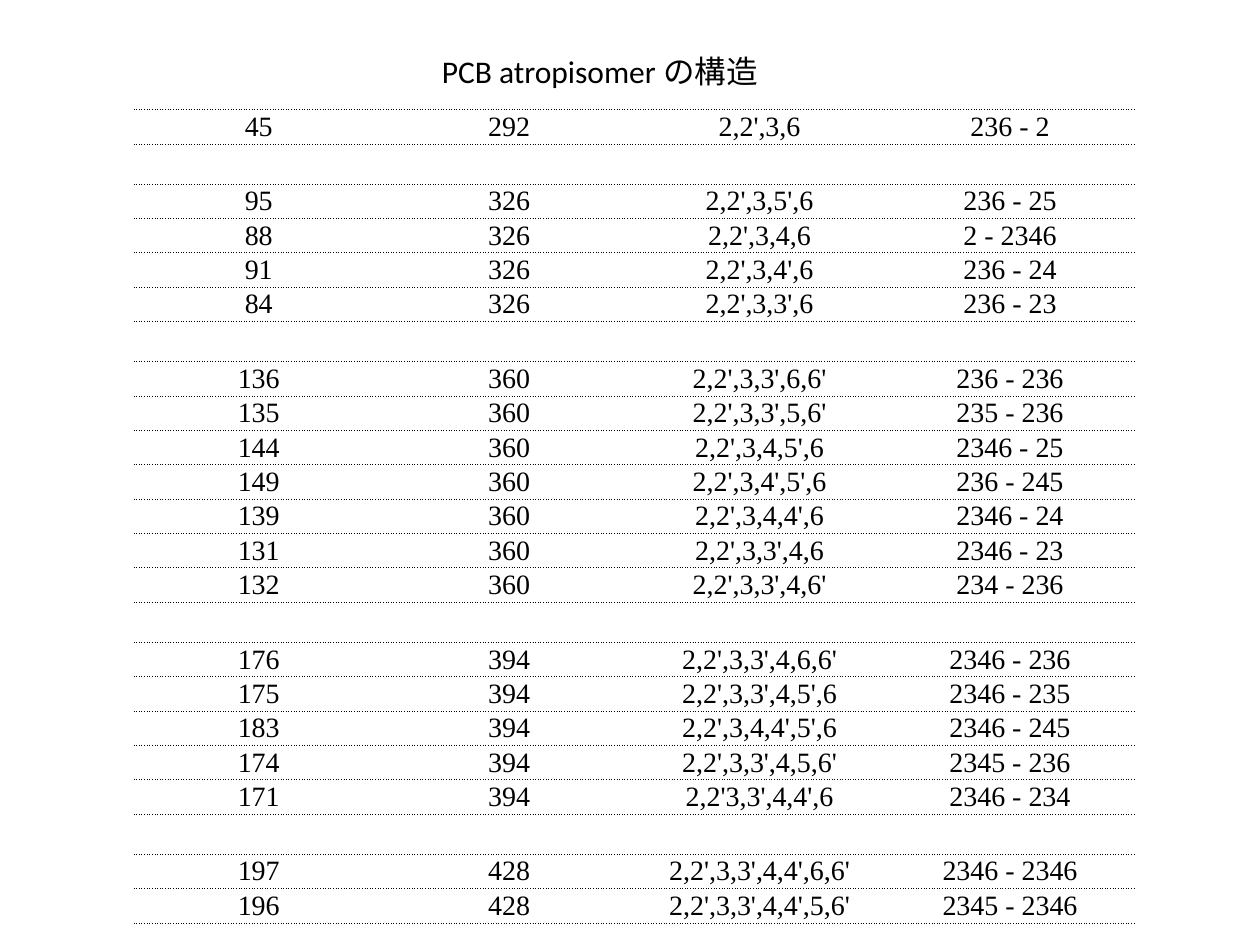
"""Build the slide that lists the PCB atropisomers by molecular mass."""
import dataclasses

import lxml.etree
import pptx
import pptx.dml.color
import pptx.enum.text
import pptx.oxml
import pptx.oxml.ns
import pptx.util

Inches = pptx.util.Inches


@dataclasses.dataclass(frozen=True)
class Theme:
    """Colours, fonts and sizes of the slide."""
    ink: str = "000000"
    title_font: str = "Calibri"
    title_size: int = 18
    body_font: str = "Times New Roman"
    body_size: int = 16
    rule_width: float = 0.5


THEME = Theme()
ROW_HEIGHT = 6.27 / 23
GAP_HEIGHT = 0.32
CONGENERS = {
    "292": [("45", "2,2',3,6", "236 - 2")],
    "326": [
        ("95", "2,2',3,5',6", "236 - 25"),
        ("88", "2,2',3,4,6", "2 - 2346"),
        ("91", "2,2',3,4',6", "236 - 24"),
        ("84", "2,2',3,3',6", "236 - 23"),
    ],
    "360": [
        ("136", "2,2',3,3',6,6'", "236 - 236"),
        ("135", "2,2',3,3',5,6'", "235 - 236"),
        ("144", "2,2',3,4,5',6", "2346 - 25"),
        ("149", "2,2',3,4',5',6", "236 - 245"),
        ("139", "2,2',3,4,4',6", "2346 - 24"),
        ("131", "2,2',3,3',4,6", "2346 - 23"),
        ("132", "2,2',3,3',4,6'", "234 - 236"),
    ],
    "394": [
        ("176", "2,2',3,3',4,6,6'", "2346 - 236"),
        ("175", "2,2',3,3',4,5',6", "2346 - 235"),
        ("183", "2,2',3,4,4',5',6", "2346 - 245"),
        ("174", "2,2',3,3',4,5,6'", "2345 - 236"),
        ("171", "2,2'3,3',4,4',6", "2346 - 234"),
    ],
    "428": [
        ("197", "2,2',3,3',4,4',6,6'", "2346 - 2346"),
        ("196", "2,2',3,3',4,4',5,6'", "2345 - 2346"),
    ],
}


def table_rows():
    """Return the rows of all mass groups, with an empty row between groups."""
    rows = []
    for mass, members in CONGENERS.items():
        if rows:
            rows.append(("",) * 4)
        rows += [(number, mass, pattern, rings) for number, pattern, rings in members]
    return rows


def style_paragraph(para, font, size):
    """Centre a paragraph and format its runs."""
    para.alignment = pptx.enum.text.PP_ALIGN.CENTER
    for span in para.runs:
        span.font.name = font
        span.font.size = pptx.util.Pt(size)
        span.font.color.rgb = pptx.dml.color.RGBColor.from_string(THEME.ink)


def add_title(page, text):
    """Place and format the slide title."""
    box = page.shapes.title
    box.left, box.top, box.width, box.height = map(Inches, (1.69, 0.36, 6.14, 0.4))
    frame = box.text_frame
    frame.text = text
    frame.word_wrap = True
    frame.vertical_anchor = pptx.enum.text.MSO_ANCHOR.TOP
    style_paragraph(frame.paragraphs[0], THEME.title_font, THEME.title_size)


def rule_cell(cell):
    """Give a cell dotted rules above and below and none at its sides."""
    properties = cell._tc.get_or_add_tcPr()
    dotted = (f'<a:solidFill><a:srgbClr val="{THEME.ink}"/></a:solidFill>'
              '<a:prstDash val="sysDot"/>')
    sides = {"lnL": "<a:noFill/>", "lnR": "<a:noFill/>", "lnT": dotted, "lnB": dotted}
    width = pptx.util.Pt(THEME.rule_width)
    namespace = pptx.oxml.ns.nsdecls("a")
    for index, (side, content) in enumerate(sides.items()):
        line = pptx.oxml.parse_xml(f'<a:{side} {namespace} w="{width}">{content}</a:{side}>')
        properties.insert(index, line)


def fill_cell(cell, text):
    """Write one cell of the table."""
    cell.margin_left = cell.margin_right = cell.margin_top = cell.margin_bottom = 0
    cell.vertical_anchor = pptx.enum.text.MSO_ANCHOR.MIDDLE
    cell.fill.background()
    rule_cell(cell)
    if text:
        cell.text_frame.text = text
        style_paragraph(cell.text_frame.paragraphs[0], THEME.body_font, THEME.body_size)


def add_congener_table(page, rows):
    """Add the table of congeners."""
    table = page.shapes.add_table(
        len(rows), 4, Inches(1.06), Inches(0.87), Inches(7.95), Inches(6.27)).table
    table.first_row = table.horz_banding = False
    for row, texts in zip(table.rows, rows):
        row.height = Inches(ROW_HEIGHT if any(texts) else GAP_HEIGHT)
        for cell, text in zip(row.cells, texts):
            fill_cell(cell, text)


def main():
    """Build and save the deck."""
    deck = pptx.Presentation()
    deck.slide_width, deck.slide_height = Inches(10), Inches(7.5)
    page = deck.slides.add_slide(deck.slide_layouts[5])
    add_congener_table(page, table_rows())
    add_title(page, "PCB atropisomer の構造")
    deck.save("out.pptx")


if __name__ == "__main__":
    main()
